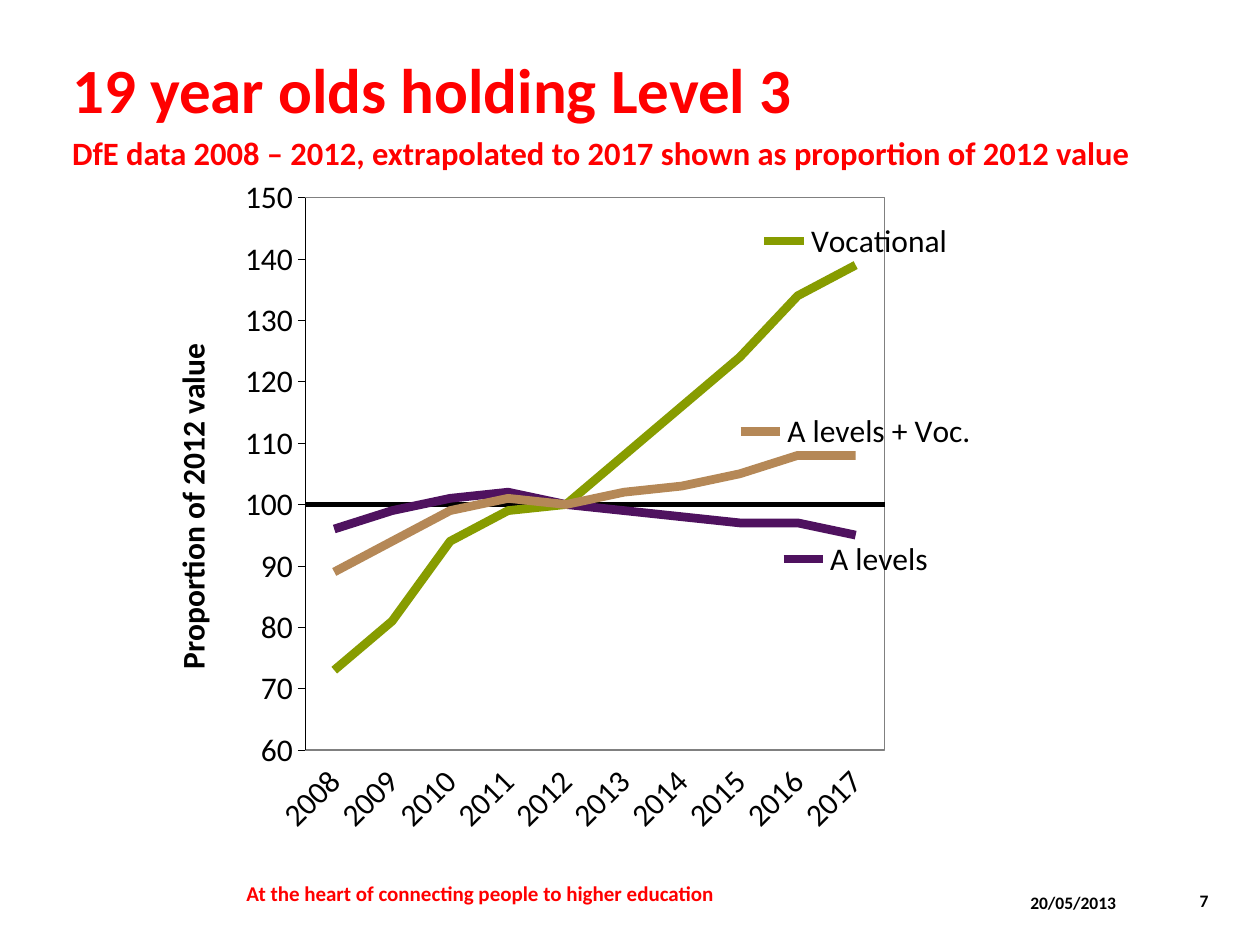
import pptx
import pptx.chart.data
import pptx.dml.color
import pptx.enum.chart
import pptx.enum.text
import pptx.oxml
import pptx.oxml.ns
import pptx.util
from pptx.util import Cm

FONT = "Calibri"
COLOURS = {
    "red": "FF0000",
    "black": "000000",
    "frame": "808080",
    "a_levels": "4F125F",
    "vocational": "879C00",
    "combined": "B58857",
}
YEARS = [str(year) for year in range(2008, 2018)]
LABEL_POSITION = pptx.enum.chart.XL_LABEL_POSITION
SERIES = [
    ("A levels", "a_levels", LABEL_POSITION.BELOW,
     (96, 99, 101, 102, 100, 99, 98, 97, 97, 95)),
    ("Vocational", "vocational", LABEL_POSITION.ABOVE,
     (73, 81, 94, 99, 100, 108, 116, 124, 134, 139)),
    ("A levels + Voc.", "combined", LABEL_POSITION.ABOVE,
     (89, 94, 99, 101, 100, 102, 103, 105, 108, 108)),
]
PLOT_LAYOUT = {"x": 0.222, "y": 0.029, "w": 0.503, "h": 0.799}


def rgb(name):
    return pptx.dml.color.RGBColor.from_string(COLOURS[name])


def style_font(font, size, colour="black", bold=False):
    font.name = FONT
    font.size = pptx.util.Pt(size)
    font.bold = bold
    font.color.rgb = rgb(colour)


def style_line(line, colour, width):
    line.color.rgb = rgb(colour)
    line.width = pptx.util.Pt(width)


def place(shape, left, top, width, height):
    shape.left, shape.top = Cm(left), Cm(top)
    shape.width, shape.height = Cm(width), Cm(height)


def write_text(shape, text, size, colour, anchor="MIDDLE", align="LEFT"):
    frame = shape.text_frame
    frame.text = text
    frame.word_wrap = True
    frame.auto_size = pptx.enum.text.MSO_AUTO_SIZE.NONE
    frame.vertical_anchor = pptx.enum.text.MSO_ANCHOR[anchor]
    paragraph = frame.paragraphs[0]
    paragraph.alignment = pptx.enum.text.PP_ALIGN[align]
    paragraph.space_before = pptx.util.Pt(0)
    style_font(paragraph.runs[0].font, size, colour, True)


def remove_bullet(paragraph):
    properties = paragraph._p.get_or_add_pPr()
    properties.set("marL", "0")
    properties.set("indent", "0")
    pptx.oxml.ns.qn("a:buNone")
    properties.append(pptx.oxml.parse_xml(
        f'<a:buNone {pptx.oxml.ns.nsdecls("a")}/>'))


def add_headings(slide):
    title, subtitle = slide.placeholders
    place(title, 1.2, 0.58, 24.2, 2.42)
    write_text(title, "19 year olds holding Level 3", 36, "red")
    place(subtitle, 1.2, 2.39, 22.84, 1.2)
    write_text(
        subtitle,
        "DfE data 2008 – 2012, extrapolated to 2017 shown as proportion of 2012 value",
        18.6, "red", anchor="BOTTOM")
    remove_bullet(subtitle.text_frame.paragraphs[0])


def add_footer_text(slide, text, box, size, colour, align="LEFT"):
    footer = slide.shapes.add_textbox(*(Cm(length) for length in box))
    write_text(footer, text, size, colour, align=align)


def format_plot_area(chart):
    plot_area = chart._chartSpace.chart.plotArea
    for layout in plot_area.findall(pptx.oxml.ns.qn("c:layout")):
        plot_area.remove(layout)
    sizes = "".join(
        f'<c:{key} val="{value}"/>' for key, value in PLOT_LAYOUT.items())
    plot_area.insert(0, pptx.oxml.parse_xml(
        f'<c:layout {pptx.oxml.ns.nsdecls("c")}><c:manualLayout>'
        '<c:layoutTarget val="inner"/><c:xMode val="edge"/>'
        f'<c:yMode val="edge"/>{sizes}</c:manualLayout></c:layout>'))
    plot_area.append(pptx.oxml.parse_xml(
        f'<c:spPr {pptx.oxml.ns.nsdecls("c", "a")}><a:noFill/>'
        '<a:ln w="9525"><a:solidFill>'
        f'<a:srgbClr val="{COLOURS["frame"]}"/>'
        '</a:solidFill></a:ln></c:spPr>'))


def format_axes(chart):
    ticks = pptx.enum.chart.XL_TICK_MARK
    years = chart.category_axis
    years.major_tick_mark = ticks.NONE
    years.tick_label_position = pptx.enum.chart.XL_TICK_LABEL_POSITION.LOW
    style_font(years.tick_labels.font, 18)
    years._element.txPr.bodyPr.set("rot", "-2700000")
    style_line(years.format.line, "black", 2.5)

    proportion = chart.value_axis
    proportion.minimum_scale, proportion.maximum_scale = 60, 150
    proportion.major_unit = 10
    proportion.crosses_at = 100
    proportion.has_major_gridlines = False
    proportion.major_tick_mark = ticks.OUTSIDE
    proportion.tick_labels.number_format = "#,##0"
    proportion.tick_labels.number_format_is_linked = False
    style_font(proportion.tick_labels.font, 18)
    style_line(proportion.format.line, "black", 0.25)
    title_frame = proportion.axis_title.text_frame
    title_frame.text = "Proportion of 2012 value"
    style_font(title_frame.paragraphs[0].runs[0].font, 18, bold=True)
    title_frame._txBody.bodyPr.set("rot", "-5400000")


def label_last_point(series, position):
    series.data_labels.show_value = False
    label = series.points[len(YEARS) - 1].data_label
    style_font(label.font, 18)
    label.position = position
    shown = {"showLegendKey": "1", "showVal": "0", "showSerName": "1"}
    for element in series._element.xpath("c:dLbls/c:dLbl/*"):
        name = element.tag.split("}")[1]
        if name in shown:
            element.set("val", shown[name])


def add_level_chart(slide):
    data = pptx.chart.data.CategoryChartData()
    data.categories = YEARS
    for name, _, _, values in SERIES:
        data.add_series(name, values)
    chart = slide.shapes.add_chart(
        pptx.enum.chart.XL_CHART_TYPE.LINE,
        Cm(1), Cm(3.58), Cm(23.22), Cm(13.94), data).chart
    chart.has_title = False
    chart.has_legend = False
    style_font(chart.font, 18)
    format_plot_area(chart)
    format_axes(chart)
    chart.plots[0].vary_by_categories = False
    for series, (_, colour, position, _) in zip(chart.plots[0].series, SERIES):
        series.smooth = False
        series.marker.style = pptx.enum.chart.XL_MARKER_STYLE.NONE
        style_line(series.format.line, colour, 5)
        label_last_point(series, position)


def main():
    presentation = pptx.Presentation()
    presentation.slide_width, presentation.slide_height = Cm(25.4), Cm(19.05)
    slide = presentation.slides.add_slide(presentation.slide_layouts[1])
    add_headings(slide)
    add_level_chart(slide)
    add_footer_text(slide, "20/05/2013", (20.52, 17.68, 2.64, 1.02), 10, "black")
    add_footer_text(
        slide, "At the heart of connecting people to higher education",
        (4.72, 17.5, 11.99, 1.02), 12, "red")
    add_footer_text(slide, "7", (23.09, 17.65, 1.52, 1.02), 10, "black", "RIGHT")
    presentation.save("out.pptx")


if __name__ == "__main__":
    main()
